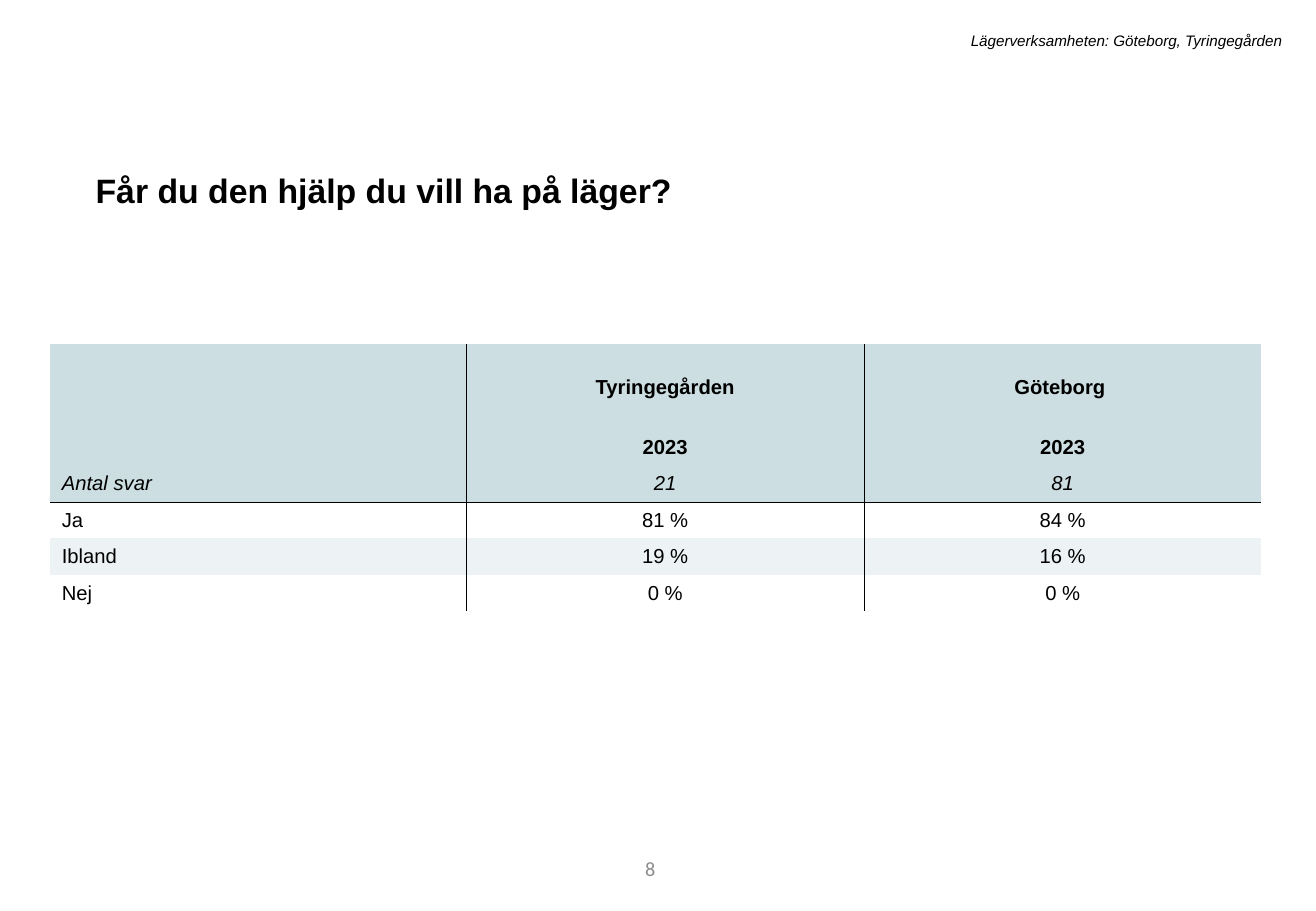
import pptx
import pptx.dml.color
import pptx.enum.text
import pptx.oxml
import pptx.oxml.ns
import pptx.util
from pptx.util import Cm

ALIGN = pptx.enum.text.PP_ALIGN
ANCHOR = pptx.enum.text.MSO_ANCHOR


def rgb(color):
    return pptx.dml.color.RGBColor.from_string(color)


def write(frame, text, size, align, color="000000", font="Arial", bold=False, italic=False):
    """Put one formatted run in the frame's first paragraph and return the paragraph."""
    para = frame.paragraphs[0]
    para.alignment = align
    span = para.add_run()
    span.text = text
    span.font.name = font
    span.font.size = pptx.util.Pt(size)
    span.font.bold = bold
    span.font.italic = italic
    span.font.color.rgb = rgb(color)
    return para


deck = pptx.Presentation()
deck.slide_width, deck.slide_height = Cm(27.51), Cm(19.05)
page = deck.slides.add_slide(deck.slide_layouts[6])

number_box = page.shapes.add_textbox(Cm(7.75), Cm(17.65), Cm(6.2), Cm(1.02))
number_box.text_frame.word_wrap = True
number_box.text_frame.vertical_anchor = ANCHOR.MIDDLE
write(number_box.text_frame, "8", 12, ALIGN.RIGHT, color="8C8C8C", font="Calibri")

title_box = page.shapes.add_textbox(Cm(1.75), Cm(3.25), Cm(23.88), Cm(1.19))
title_box.text_frame.word_wrap = True
title = write(title_box.text_frame, "Får du den hjälp du vill ha på läger?", 20, ALIGN.LEFT, bold=True)
title.line_spacing = 1.2
title.space_before = pptx.util.Pt(10)

header_box = page.shapes.add_textbox(Cm(4.55), Cm(0.53), Cm(22.5), Cm(0.64))
header_box.text_frame.word_wrap = True
write(header_box.text_frame, "Lägerverksamheten: Göteborg, Tyringegården", 9, ALIGN.RIGHT, italic=True)

answers = [
    ["", "Tyringegården", "Göteborg "],
    ["", "2023", "2023"],
    ["Antal svar", "21", "81"],
    ["Ja", "81 %", "84 %"],
    ["Ibland", "19 %", "16 %"],
    ["Nej", "0 %", "0 %"],
]
row_heights = [1.27, 1.27, 0.76, 0.76, 0.76, 0.76]
row_fills = ["CCDEE1"] * 3 + ["FFFFFF", "EDF3F4", "FFFFFF"]
column_widths = [8.71, 8.31, 8.31]
COUNT_ROW = 2

table = page.shapes.add_table(
    len(answers), len(column_widths), Cm(1.04), Cm(7.19),
    Cm(sum(column_widths)), Cm(sum(row_heights))).table
table.first_row = False
table.horz_banding = False
for column, width in zip(table.columns, column_widths):
    column.width = Cm(width)

for r, texts in enumerate(answers):
    table.rows[r].height = Cm(row_heights[r])
    for c, text in enumerate(texts):
        cell = table.cell(r, c)
        cell.vertical_anchor = ANCHOR.BOTTOM if r < COUNT_ROW else ANCHOR.MIDDLE
        if text:
            write(cell.text_frame, text, 12, ALIGN.CENTER if c else ALIGN.LEFT,
                  bold=r < COUNT_ROW, italic=r == COUNT_ROW)
        lines = {
            "L": c > 0,
            "R": c < len(column_widths) - 1,
            "T": r == COUNT_ROW + 1,
            "B": r == COUNT_ROW,
        }
        properties = cell._tc.get_or_add_tcPr()
        for side, drawn in lines.items():
            paint = '<a:solidFill><a:srgbClr val="000000"/></a:solidFill>' if drawn else "<a:noFill/>"
            properties.append(pptx.oxml.parse_xml(
                f'<a:ln{side} {pptx.oxml.ns.nsdecls("a")} w="{pptx.util.Pt(0.25)}">{paint}</a:ln{side}>'))
        cell.fill.solid()
        cell.fill.fore_color.rgb = rgb(row_fills[r])

deck.save("out.pptx")
